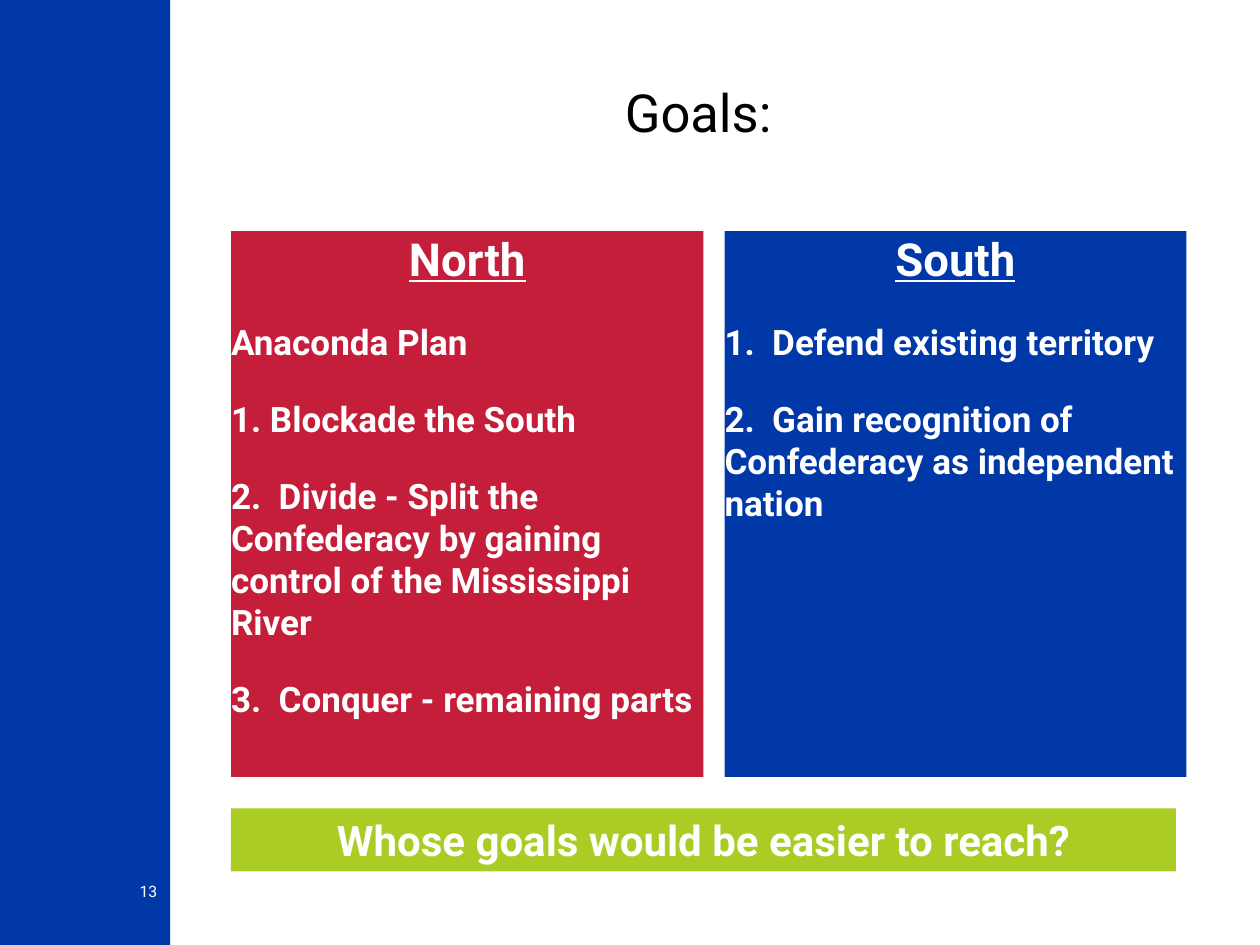
from lxml import etree
from pptx import Presentation
from pptx.dml.color import RGBColor
from pptx.enum.shapes import MSO_SHAPE
from pptx.enum.text import MSO_ANCHOR, MSO_AUTO_SIZE, PP_ALIGN
from pptx.oxml.ns import qn
from pptx.util import Inches, Pt

RECTANGLE = MSO_SHAPE.RECTANGLE
TOP, BOTTOM = MSO_ANCHOR.TOP, MSO_ANCHOR.BOTTOM
LEFT, CENTER, RIGHT = PP_ALIGN.LEFT, PP_ALIGN.CENTER, PP_ALIGN.RIGHT
FIXED_SIZE = MSO_AUTO_SIZE.NONE

BLUE = RGBColor(0x00, 0x38, 0xA8)
RED = RGBColor(0xC4, 0x1E, 0x3A)
GREEN = RGBColor(0xAB, 0xCC, 0x25)
WHITE = RGBColor(0xFF, 0xFF, 0xFF)
BLACK = RGBColor(0x00, 0x00, 0x00)

FONT = "Roboto"
COLUMNS, ROWS = 120, 90
SLIDE_WIDTH, SLIDE_HEIGHT = Inches(10), Inches(7.5)
CONTENT_LEFT = 22
PANEL_TOP, PANEL_ROWS = 22, 52

NORTH_GOALS = [
    "Anaconda Plan",
    "1. Blockade the South",
    "2.  Divide - Split the Confederacy by gaining control of the Mississippi River",
    "3.  Conquer - remaining parts",
]
SOUTH_GOALS = [
    "1.  Defend existing territory",
    "2.  Gain recognition of Confederacy as independent nation",
]


def grid_box(column, row, columns, rows):
    return (
        round(SLIDE_WIDTH * column / COLUMNS),
        round(SLIDE_HEIGHT * row / ROWS),
        round(SLIDE_WIDTH * columns / COLUMNS),
        round(SLIDE_HEIGHT * rows / ROWS),
    )


def place(placeholder, box):
    placeholder.left, placeholder.top, placeholder.width, placeholder.height = box


def prepare_frame(frame, anchor=TOP, inset=0):
    frame.word_wrap = True
    frame.auto_size = FIXED_SIZE
    frame.vertical_anchor = anchor
    frame.margin_left = frame.margin_right = Inches(2 * inset)
    frame.margin_top = frame.margin_bottom = Inches(inset)


def write(paragraph, text, size, color=WHITE, align=LEFT, bold=False, underline=False, before=0):
    paragraph.alignment = align
    paragraph.space_before = Pt(before)
    run = paragraph.add_run()
    run.text = text
    font = run.font
    font.name, font.size, font.color.rgb = FONT, Pt(size), color
    font.bold, font.underline = bold, underline


def remove_bullet(paragraph):
    properties = paragraph._p.get_or_add_pPr()
    properties.set("marL", "0")
    properties.set("indent", "0")
    etree.SubElement(properties, qn("a:buNone"))


def add_block(slide, box, color):
    block = slide.shapes.add_shape(RECTANGLE, *box)
    block.shadow.inherit = False
    block.fill.solid()
    block.fill.fore_color.rgb = color
    block.line.fill.background()
    return block


def add_sidebar(slide, box, page):
    left, top, width, height = box
    add_block(slide, box, BLUE)
    number = slide.shapes.add_textbox(
        left + round(width * 0.43), top + round(height * 0.933),
        round(width * 0.495), round(height * 0.044))
    prepare_frame(number.text_frame)
    write(number.text_frame.paragraphs[0], page, 9, align=RIGHT)


def fill_title(title, box, text):
    place(title, box)
    prepare_frame(title.text_frame, anchor=BOTTOM)
    write(title.text_frame.paragraphs[0], text, 30, color=BLACK, align=CENTER)


def fill_goals(panel, box, color, side, goals):
    place(panel, box)
    panel.fill.solid()
    panel.fill.fore_color.rgb = color
    frame = panel.text_frame
    prepare_frame(frame)
    write(frame.paragraphs[0], side, 26, align=CENTER, bold=True, underline=True)
    for goal in goals:
        write(frame.add_paragraph(), goal, 20, bold=True, before=20)
    for paragraph in frame.paragraphs:
        remove_bullet(paragraph)


def add_question(slide, box, text):
    banner = add_block(slide, box, GREEN)
    prepare_frame(banner.text_frame, inset=0.05)
    write(banner.text_frame.paragraphs[0], text, 24, align=CENTER, bold=True)


def main():
    presentation = Presentation()
    presentation.slide_width, presentation.slide_height = SLIDE_WIDTH, SLIDE_HEIGHT
    slide = presentation.slides.add_slide(presentation.slide_layouts[3])
    title, north, south = slide.placeholders

    add_sidebar(slide, grid_box(0, 0, 16.2, ROWS), "13")
    fill_title(title, grid_box(CONTENT_LEFT, 3.6, 89, 10), "Goals:")
    fill_goals(north, grid_box(CONTENT_LEFT, PANEL_TOP, 45, PANEL_ROWS), RED, "North", NORTH_GOALS)
    fill_goals(south, grid_box(69, PANEL_TOP, 44, PANEL_ROWS), BLUE, "South", SOUTH_GOALS)
    add_question(slide, grid_box(CONTENT_LEFT, 77, 90, 6), "Whose goals would be easier to reach?")
    presentation.save("out.pptx")


if __name__ == "__main__":
    main()
